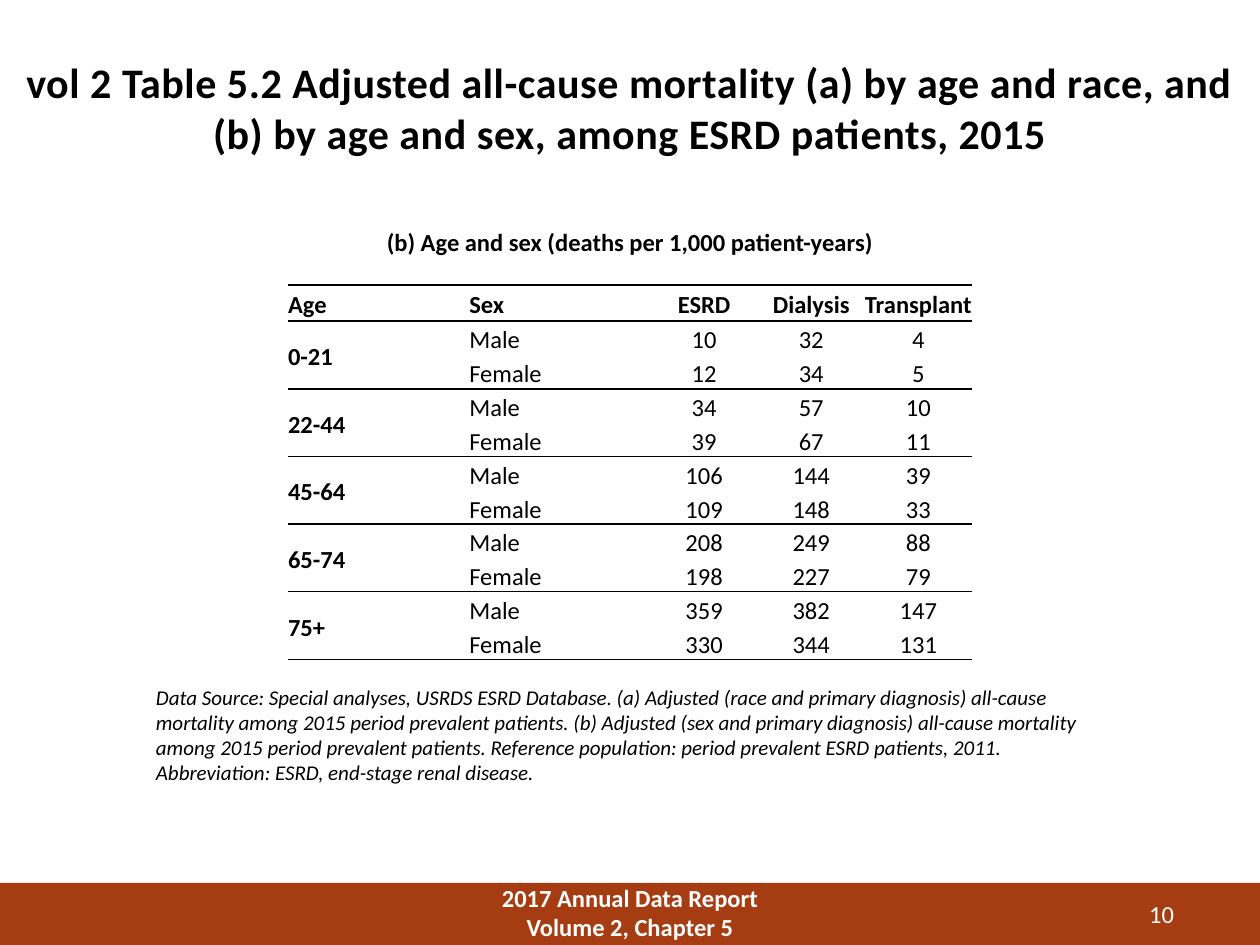
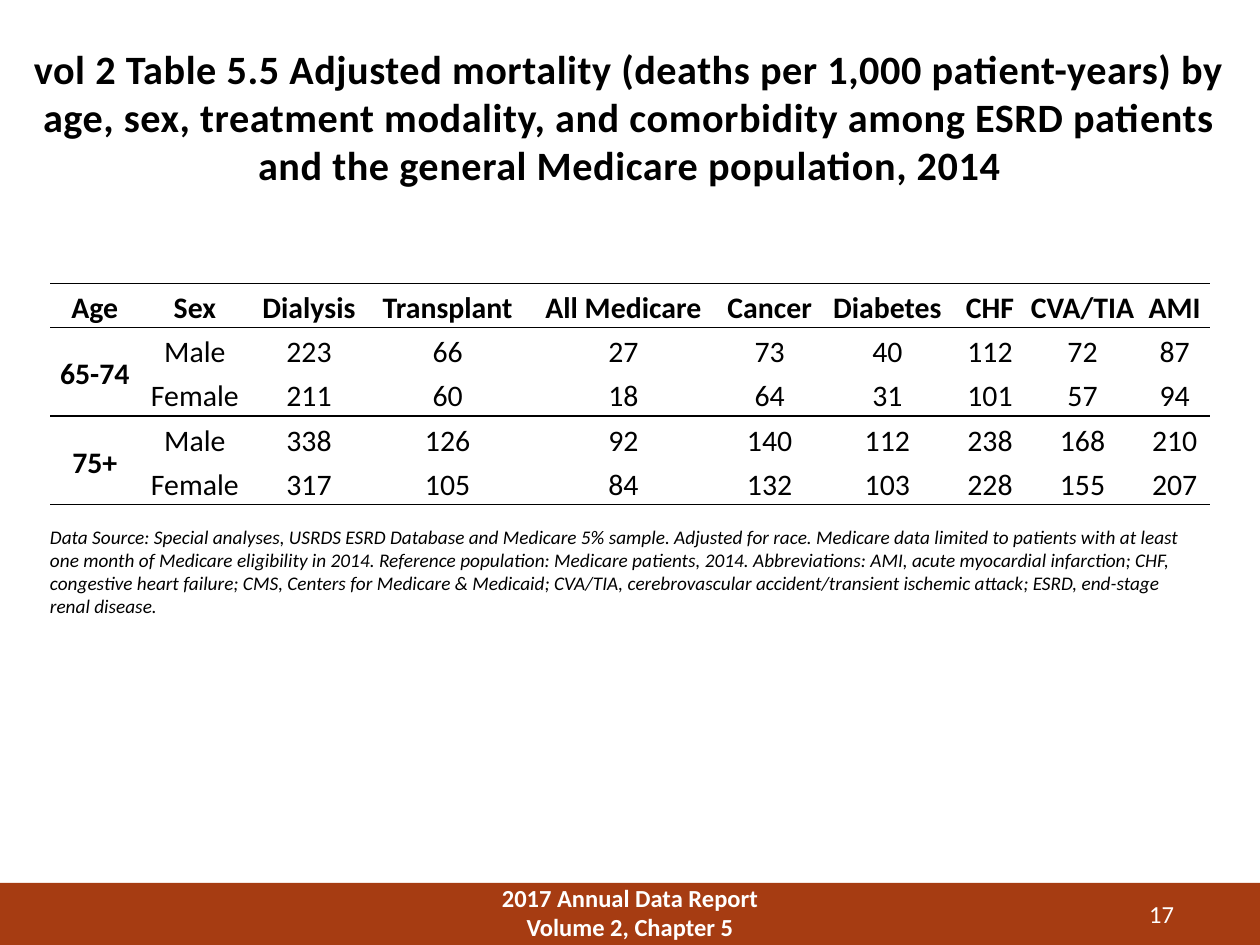
from dataclasses import dataclass

from lxml import etree
from pptx import Presentation
from pptx.dml.color import RGBColor
from pptx.enum.shapes import MSO_SHAPE
from pptx.enum.text import MSO_ANCHOR, PP_ALIGN
from pptx.oxml.ns import qn
from pptx.util import Pt

LEFT, MID, RIGHT = PP_ALIGN.LEFT, PP_ALIGN.CENTER, PP_ALIGN.RIGHT
CENTRE = MSO_ANCHOR.MIDDLE
RECT = MSO_SHAPE.RECTANGLE
WIDE, HIGH = 720, 540


@dataclass(frozen=True)
class Theme:
    font: str = "Calibri"
    ink: str = "000000"
    paper: str = "FFFFFF"
    rust: str = "A63C12"
    label: int = 14
    rule: int = 1
    track: int = 30
    lead: float = 1.15


class Deck:
    def __init__(self, theme):
        self.theme = theme
        self.prs = Presentation()
        self.prs.slide_width, self.prs.slide_height = Pt(WIDE), Pt(HIGH)
        self.slide = None

    def style(self, para, size, ink, bold=False, slant=False, align=LEFT):
        para.alignment = align
        for run in para.runs:
            font = run.font
            font.name, font.size = self.theme.font, Pt(size)
            font.bold, font.italic = bold, slant
            font.color.rgb = RGBColor.from_string(ink)

    def text(self, words, box, size, ink=None, wrap=True, **look):
        frame = self.slide.shapes.add_textbox(*map(Pt, box)).text_frame
        frame.word_wrap = wrap
        frame.text = words
        for para in frame.paragraphs:
            self.style(para, size, ink or self.theme.ink, **look)
        return frame

    def page(self, number):
        """Start a slide with its footer band."""
        theme = self.theme
        self.slide = self.prs.slides.add_slide(self.prs.slide_layouts[6])
        band = self.slide.shapes.add_shape(
            RECT, Pt(0), Pt(504.5), Pt(WIDE), Pt(35.5))
        band.shadow.inherit = False
        band.fill.solid()
        band.fill.fore_color.rgb = RGBColor.from_string(theme.rust)
        band.line.fill.background()
        self.text("2017 Annual Data Report\nVolume 2, Chapter 5",
                  (258, 501, 204, 24), theme.label, theme.paper,
                  bold=True, align=MID)
        self.text(str(number), (606, 510, 72, 22), theme.label, theme.paper,
                  align=RIGHT)

    def title(self, words, top, high, size):
        frame = self.text(words, (0, top, WIDE, high), size,
                          bold=True, align=MID)
        for run in frame.paragraphs[0].runs:
            run.font._element.set("spc", str(self.theme.track))

    def note(self, words, box, size):
        self.text(words, box, size, slant=True)

    def edge(self, cell, drawn):
        """Rule the named sides of a cell and clear the others."""
        props = cell._tc.get_or_add_tcPr()
        for side in ("lnL", "lnR", "lnT", "lnB"):
            line = etree.SubElement(props, qn(f"a:{side}"))
            if side in drawn:
                line.set("w", str(Pt(self.theme.rule)))
                fill = etree.SubElement(line, qn("a:solidFill"))
                etree.SubElement(fill, qn("a:srgbClr"), val=self.theme.ink)
            else:
                etree.SubElement(line, qn("a:noFill"))

    def table(self, heads, groups, spot, cols, rows, size, lefts=0, pad=0):
        """Draw pairs of rows by age; the first `lefts` columns align left."""
        lines = [heads]
        for age, pair in groups.items():
            for sex, vals in zip(("Male", "Female"), pair):
                lines.append([age, sex, *vals])
        highs = [rows[0]] + [rows[1]] * (len(lines) - 1)
        grid = self.slide.shapes.add_table(
            len(lines), len(heads), *map(Pt, spot),
            Pt(sum(cols)), Pt(sum(highs))).table
        grid.first_row = grid.horz_banding = False
        for col, wide in zip(grid.columns, cols):
            col.width = Pt(wide)
        for row, high in zip(grid.rows, highs):
            row.height = Pt(high)
        for r in range(1, len(lines), 2):
            grid.cell(r, 0).merge(grid.cell(r + 1, 0))
        for r, line in enumerate(lines):
            for c, value in enumerate(line):
                cell = grid.cell(r, c)
                cell.margin_left = cell.margin_right = 0
                cell.margin_top = cell.margin_bottom = Pt(pad)
                cell.vertical_anchor = CENTRE
                drawn = {"lnT"} if r == 0 or r % 2 else set()
                if r % 2 == 0 or c == 0:
                    drawn.add("lnB")
                self.edge(cell, drawn)
                cell.fill.background()
                if cell.is_spanned:
                    continue
                cell.text_frame.text = str(value)
                para = cell.text_frame.paragraphs[0]
                para.line_spacing = self.theme.lead
                self.style(para, size, self.theme.ink,
                           bold=r == 0 or c == 0,
                           align=LEFT if c < lefts else MID)


def sexes(deck):
    deck.page(10)
    deck.title("vol 2 Table 5.2 Adjusted all-cause mortality (a) by age and "
               "race, and (b) by age and sex, among ESRD patients, 2015",
               29, 59, 24)
    deck.note("Data Source: Special analyses, USRDS ESRD Database. "
              "(a) Adjusted (race and primary diagnosis) all-cause mortality "
              "among 2015 period prevalent patients. (b) Adjusted (sex and "
              "primary diagnosis) all-cause mortality among 2015 period "
              "prevalent patients. Reference population: period prevalent "
              "ESRD patients, 2011. Abbreviation: ESRD, end-stage renal "
              "disease.", (82, 387.5, 555, 65.5), 12)
    deck.text("(b) Age and sex (deaths per 1,000 patient-years)",
              (212, 126, 296, 24.5), deck.theme.label, wrap=False,
              bold=True, align=MID)
    deck.table(["Age", "Sex", "ESRD", "Dialysis", "Transplant"], {
        "0-21": ((10, 32, 4), (12, 34, 5)),
        "22-44": ((34, 57, 10), (39, 67, 11)),
        "45-64": ((106, 144, 39), (109, 148, 33)),
        "65-74": ((208, 249, 88), (198, 227, 79)),
        "75+": ((359, 382, 147), (330, 344, 131)),
    }, (164.6, 162.8), [103.6] * 2 + [61.2] * 3, (20.7, 19.3),
        deck.theme.label, lefts=2)


def illness(deck):
    deck.page(17)
    deck.title("vol 2 Table 5.5 Adjusted mortality (deaths per 1,000 "
               "patient-years) by age, sex, treatment modality, and "
               "comorbidity among ESRD patients and the general Medicare "
               "population, 2014", 21.5, 90, 23)
    deck.table(["Age", "Sex", "Dialysis", "Transplant", "All Medicare",
                "Cancer", "Diabetes", "CHF", "CVA/TIA", "AMI"], {
        "65-74": ((223, 66, 27, 73, 40, 112, 72, 87),
                  (211, 60, 18, 64, 31, 101, 57, 94)),
        "75+": ((338, 126, 92, 140, 112, 238, 168, 210),
                (317, 105, 84, 132, 103, 228, 155, 207)),
    }, (28.7, 162), [51, 63.4, 67, 91.5, 109.5, 57.6, 77, 40.3, 65.5, 39.8],
        (25.2, 25.3), 17, pad=0.7)
    deck.note("Data Source: Special analyses, USRDS ESRD Database and "
              "Medicare 5% sample. Adjusted for race. Medicare data limited "
              "to patients with at least one month of Medicare eligibility "
              "in 2014. Reference population: Medicare patients, 2014. "
              "Abbreviations: AMI, acute myocardial infarction; CHF, "
              "congestive heart failure; CMS, Centers for Medicare & "
              "Medicaid; CVA/TIA, cerebrovascular accident/transient "
              "ischemic attack; ESRD, end-stage renal disease.",
              (21.5, 296.6, 670, 60.5), 11)


def main():
    deck = Deck(Theme())
    sexes(deck)
    illness(deck)
    deck.prs.save("out.pptx")


if __name__ == "__main__":
    main()
